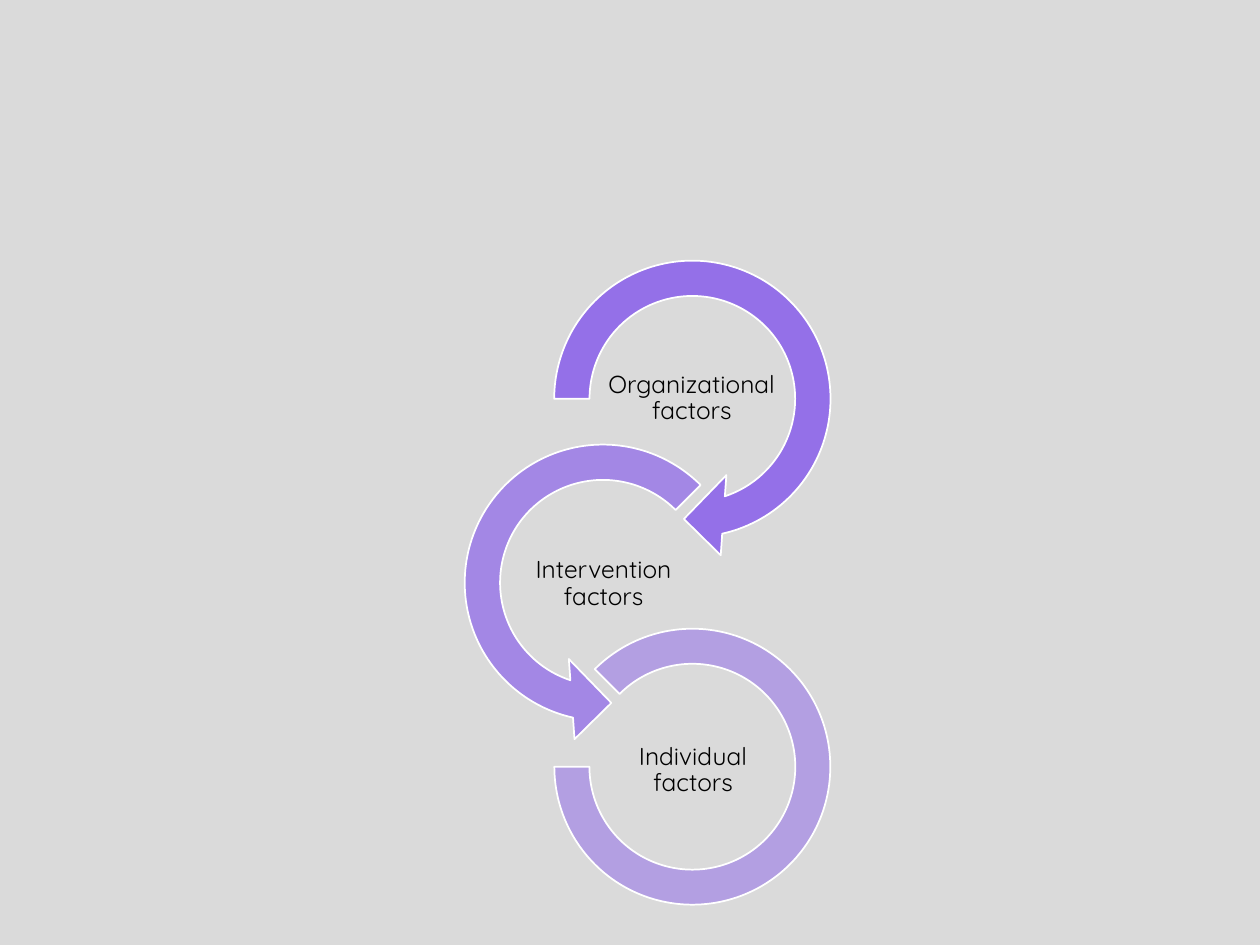
from lxml.etree import SubElement
from pptx import Presentation
from pptx.dml.color import RGBColor
from pptx.enum.shapes import MSO_SHAPE
from pptx.enum.text import MSO_ANCHOR, PP_ALIGN
from pptx.oxml.ns import qn
from pptx.util import Inches, Pt

BACKGROUND, PURPLE, WHITE, BLACK = "DADADA", "8D65EA", "FFFFFF", "000000"
LABEL_WIDTH, LABEL_HEIGHT = 1.42, 0.71

# label, label left and top, ring preset, ring left, top and size, adjustments, opacity in %
FACTORS = [
    ("Organizational factors", (4.78, 2.81), MSO_SHAPE.CIRCULAR_ARROW,
     (4.22, 1.89, 2.55), (0.11, 11.423, 45, 108, 0.125), 90),
    ("Intervention factors", (4.08, 4.28), MSO_SHAPE.LEFT_CIRCULAR_ARROW,
     (3.51, 3.35, 2.55), (0.11, 11.423, 63, 189, 0.125), 70),
    ("Individual factors", (4.79, 5.76), MSO_SHAPE.BLOCK_ARC,
     (4.4, 4.99, 2.19), (135, 108, 0.127), 50),
]


def paint(fill, colour, opacity=100):
    fill.solid()
    fill.fore_color.rgb = RGBColor.from_string(colour)
    if opacity < 100:
        colour_element = fill._xPr.find(qn("a:solidFill"))[0]
        SubElement(colour_element, qn("a:alpha"), val=str(opacity * 1000))


def add_ring(slide, preset, place, adjustments, opacity):
    left, top, size = map(Inches, place)
    ring = slide.shapes.add_shape(preset, left, top, size, size)
    for index, value in enumerate(adjustments):
        ring.adjustments[index] = value
    ring.shadow.inherit = False
    paint(ring.fill, PURPLE, opacity)
    paint(ring.line.fill, WHITE)
    ring.line.width = Pt(1)


def add_label(slide, text, left, top, size=14, font="Quicksand", colour=BLACK):
    label = slide.shapes.add_textbox(
        Inches(left), Inches(top), Inches(LABEL_WIDTH), Inches(LABEL_HEIGHT))
    frame = label.text_frame
    frame.word_wrap = True
    frame.vertical_anchor = MSO_ANCHOR.MIDDLE
    frame.margin_left = frame.margin_right = Inches(0.01)
    frame.margin_top = frame.margin_bottom = Inches(0.01)
    paragraph = frame.paragraphs[0]
    paragraph.alignment = PP_ALIGN.CENTER
    paragraph.line_spacing = 0.9
    run = paragraph.add_run()
    run.text = text
    run.font.size = Pt(size)
    run.font.name = font
    run.font.color.rgb = RGBColor.from_string(colour)


def main():
    presentation = Presentation()
    presentation.slide_width = Inches(10)
    presentation.slide_height = Inches(7.5)
    slide = presentation.slides.add_slide(presentation.slide_layouts[6])
    paint(slide.background.fill, BACKGROUND)
    for text, corner, preset, place, adjustments, opacity in FACTORS:
        add_ring(slide, preset, place, adjustments, opacity)
        add_label(slide, text, *corner)
    presentation.save("out.pptx")


if __name__ == "__main__":
    main()
